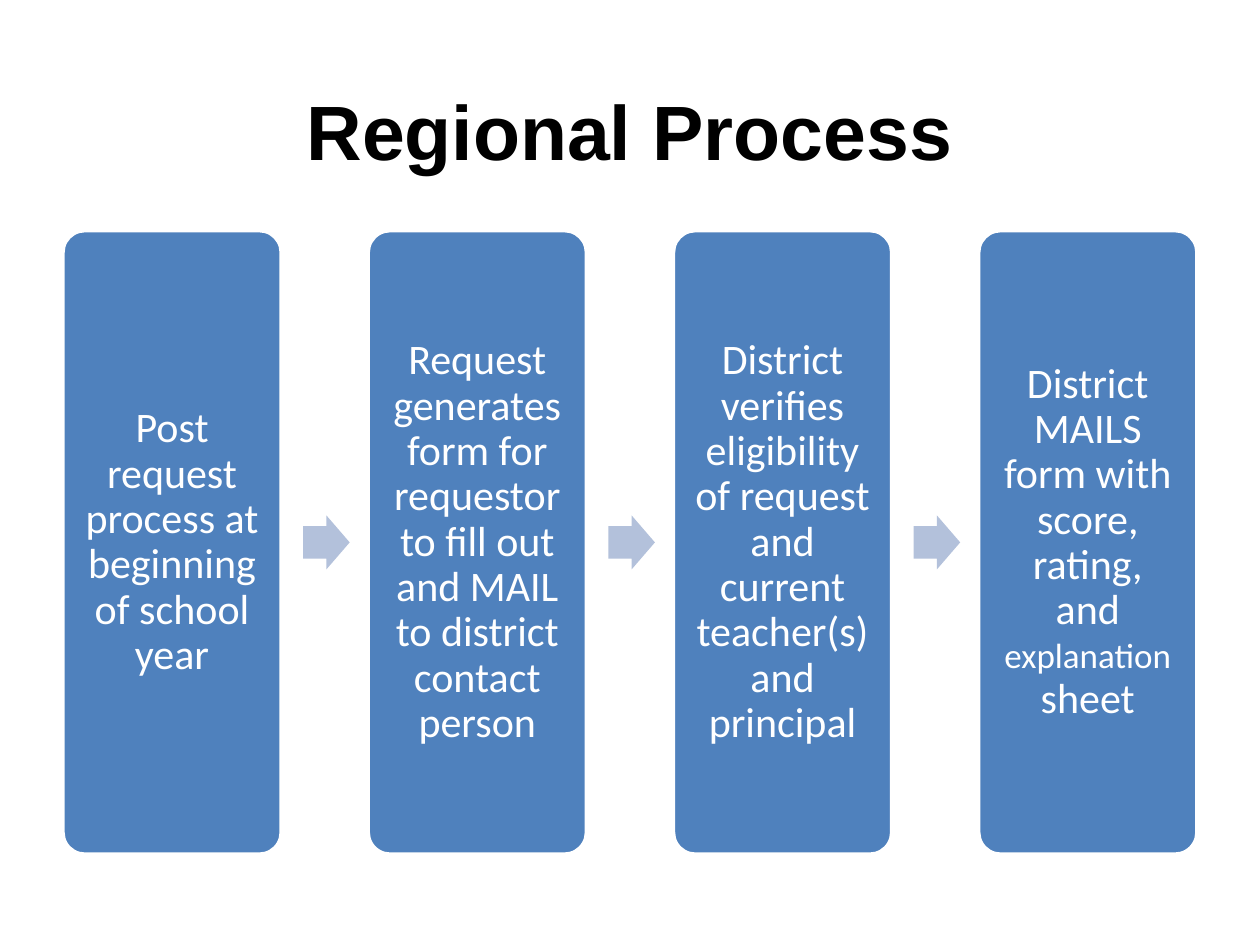
import pptx
import pptx.dml.color
import pptx.enum.shapes
import pptx.enum.text
import pptx.util
from pptx.util import Cm

COLOURS = {"title": "000000", "step": "4F81BD", "arrow": "B3C1DB", "white": "FFFFFF"}
STEPS = [
    [("Post request process at beginning of school year", 24)],
    [("Request generates form for requestor to fill out and MAIL "
      "to district contact person", 24)],
    [("District verifies eligibility of request and current teacher(s) "
      "and principal", 24)],
    [("District MAILS form with score, rating, and ", 24), ("explanation", 20),
     (" ", 23), ("sheet", 24)],
]


def colour(name):
    """Return the named colour."""
    return pptx.dml.color.RGBColor.from_string(COLOURS[name])


def write_text(shape, spans, font, fill, bold=False, inset=0.25, spacing=1.0):
    """Write centred (text, size) spans into a shape."""
    frame = shape.text_frame
    frame.word_wrap = True
    frame.vertical_anchor = pptx.enum.text.MSO_ANCHOR.MIDDLE
    frame.margin_left = frame.margin_right = Cm(inset)
    frame.margin_top = frame.margin_bottom = Cm(inset)
    para = frame.paragraphs[0]
    para.alignment = pptx.enum.text.PP_ALIGN.CENTER
    para.line_spacing = spacing
    for text, size in spans:
        span = para.add_run()
        span.text = text
        span.font.name = font
        span.font.size = pptx.util.Pt(size)
        span.font.bold = bold
        span.font.color.rgb = colour(fill)


def add_block(page, kind, left, top, width, height, fill, adjustments):
    """Add a filled preset shape without outline or shadow."""
    block = page.shapes.add_shape(kind, Cm(left), Cm(top), Cm(width), Cm(height))
    block.shadow.inherit = False
    block.fill.solid()
    block.fill.fore_color.rgb = colour(fill)
    block.line.fill.background()
    for index, value in enumerate(adjustments):
        block.adjustments[index] = value
    return block


def add_title(page, left, top, width, height):
    """Place the slide title in the given box."""
    box = page.shapes.add_textbox(Cm(left), Cm(top), Cm(width), Cm(height))
    write_text(box, [("Regional Process", 44)], "Arial", "title", bold=True)


def add_process(page, left, top, width, height, step_width=4.4):
    """Spread the steps evenly over the given box, with arrows between them."""
    kinds = pptx.enum.shapes.MSO_SHAPE
    arrow_width, arrow_height, arrow_offset = 0.94, 1.09, 0.44
    pitch = (width - step_width) / (len(STEPS) - 1)
    for index, spans in enumerate(STEPS):
        step_left = left + index * pitch
        if index:
            arrow_left = step_left - pitch + step_width + arrow_offset
            add_block(page, kinds.RIGHT_ARROW, arrow_left,
                      top + (height - arrow_height) / 2,
                      arrow_width, arrow_height, "arrow", [0.6, 0.5])
        step = add_block(page, kinds.ROUNDED_RECTANGLE, step_left, top,
                         step_width, height, "step", [0.1])
        step.line.color.rgb = colour("white")
        step.line.width = pptx.util.Pt(2)
        write_text(step, spans, "Calibri", "white", spacing=0.9)


def main():
    """Build and save the deck."""
    deck = pptx.Presentation()
    deck.slide_width, deck.slide_height = Cm(25.4), Cm(19.05)
    page = deck.slides.add_slide(deck.slide_layouts[6])
    add_title(page, 1.27, 1.02, 22.86, 3.18)
    add_process(page, 1.27, 4.65, 22.86, 12.57)
    deck.save("out.pptx")


if __name__ == "__main__":
    main()
